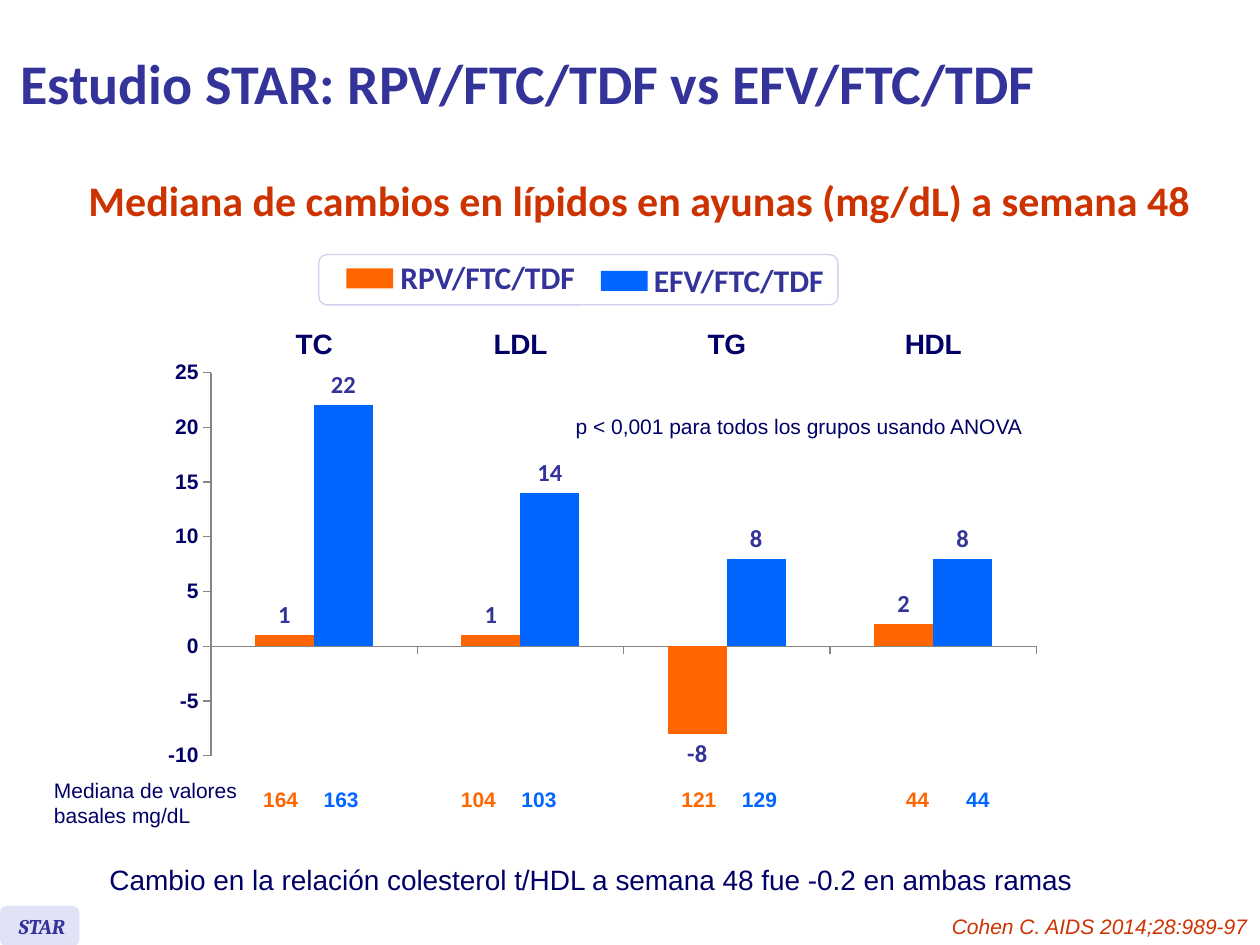
from dataclasses import dataclass

from pptx import Presentation
from pptx import util as u
from pptx.chart.data import CategoryChartData
from pptx.dml.color import RGBColor
from pptx.enum import chart as charts, shapes, text
from pptx.oxml import parse_xml
from pptx.oxml.ns import nsdecls

ORANGE, BLUE = "FF6600", "0066FF"
NAVY, INDIGO, RED = "000066", "333399", "CC3300"
GRAY = "868686"


@dataclass
class Area:
    left: float
    top: float
    width: float
    height: float

    def lengths(self):
        return [u.Inches(n) for n in (self.left, self.top, self.width, self.height)]


@dataclass
class Baseline:
    """Median starting values under one chart category."""
    left: float
    step: float
    width: float
    values: tuple[str, str]


@dataclass
class LegendKey:
    swatch: Area
    label: Area
    name: str
    color: str


def rgb(color: str) -> RGBColor:
    return RGBColor.from_string(color)


def format_font(font, color: str, **values) -> None:
    for name, value in values.items():
        setattr(font, name, u.Pt(value) if name == "size" else value)
    font.color.rgb = rgb(color)


def write(frame, words: str, color: str, align=text.PP_ALIGN.LEFT, **values):
    para = frame.paragraphs[0]
    para.text = words
    para.alignment = align
    for span in para.runs:
        format_font(span.font, color, **values)
    return para


def add_text(slide, area: Area, words: str, color: str, wrap=True, **values):
    box = slide.shapes.add_textbox(*area.lengths())
    box.text_frame.word_wrap = wrap
    return write(box.text_frame, words, color, **values)


def add_block(slide, kind, area: Area, fill: str, line: str | None = None) -> None:
    block = slide.shapes.add_shape(kind, *area.lengths())
    block.shadow.inherit = False
    block.fill.solid()
    block.fill.fore_color.rgb = rgb(fill)
    if line:
        block.line.color.rgb = rgb(line)
        block.line.width = u.Pt(0.75)
    else:
        block.line.fill.background()


def add_lipid_chart(slide) -> None:
    data = CategoryChartData()
    data.categories = ["TC", "LDL", "TG", "HDL"]
    data.add_series("RPV/FTC/TDF", [1, 1, -8, 2])
    data.add_series("EFV/FTC/TDF", [22, 14, 8, 8])
    chart = slide.shapes.add_chart(charts.XL_CHART_TYPE.COLUMN_CLUSTERED,
                                   *Area(1.17, 2.56, 7.2, 3.62).lengths(), data).chart
    chart.has_legend = chart.has_title = False
    format_font(chart.font, "002060", name="Arial", size=16, bold=True)

    plot = chart.plots[0]
    plot.gap_width, plot.overlap, plot.vary_by_categories = 150, 0, False
    for series, color in zip(plot.series, (ORANGE, BLUE)):
        series.invert_if_negative = False
        series.format.fill.solid()
        series.format.fill.fore_color.rgb = rgb(color)
        labels = series.data_labels
        labels.show_value = True
        labels.position = charts.XL_LABEL_POSITION.OUTSIDE_END
        format_font(labels.font, INDIGO, name="Calibri", size=14, bold=True)

    value_axis = chart.value_axis
    value_axis.minimum_scale, value_axis.maximum_scale, value_axis.major_unit = -10, 25, 5
    value_axis.has_major_gridlines = False
    chart.category_axis.tick_label_position = charts.XL_TICK_LABEL_POSITION.HIGH
    for axis, size in ((chart.category_axis, 16), (value_axis, 12)):
        axis.major_tick_mark = charts.XL_TICK_MARK.OUTSIDE
        axis.format.line.color.rgb = rgb(GRAY)
        format_font(axis.tick_labels.font, NAVY, name="Arial", size=size, bold=True)

    plot_area = chart.category_axis._element.getparent()
    for layout in plot_area.findall("{*}layout"):
        plot_area.remove(layout)
    places = "".join(f'<c:{tag} val="{value}"/>' for tag, value in (
        ("layoutTarget", "inner"), ("xMode", "edge"), ("yMode", "edge"),
        ("x", 0.07), ("y", 0.11), ("w", 0.91), ("h", 0.84)))
    plot_area.insert(0, parse_xml(
        f'<c:layout {nsdecls("c")}><c:manualLayout>{places}</c:manualLayout></c:layout>'))


def add_baselines(slide) -> None:
    add_text(slide, Area(0.33, 6.12, 1.71, 0.5), "Mediana de valores \nbasales mg/dL",
             NAVY, wrap=False, name="Arial", size=12)
    for group in (Baseline(1.99, 0.48, 0.48, ("164", "163")),
                  Baseline(3.56, 0.48, 0.48, ("104", "103")),
                  Baseline(5.31, 0.48, 0.48, ("121", "129")),
                  Baseline(7.09, 0.48, 0.39, ("44", "44"))):
        for index, (value, color) in enumerate(zip(group.values, (ORANGE, BLUE))):
            add_text(slide, Area(group.left + index * group.step, 6.19, group.width, 0.3),
                     value, color, wrap=False, name="Arial", size=12, bold=True)


def add_legend(slide) -> None:
    add_block(slide, shapes.MSO_SHAPE.ROUNDED_RECTANGLE, Area(2.53, 2.02, 4.12, 0.4),
              "FFFFFF", "D0D0F0")
    for key in (LegendKey(Area(2.75, 2.13, 0.37, 0.16), Area(3.08, 2, 1.73, 0.4),
                          "RPV/FTC/TDF", ORANGE),
                LegendKey(Area(4.77, 2.15, 0.37, 0.16), Area(5.09, 2.02, 1.75, 0.4),
                          "EFV/FTC/TDF", BLUE)):
        add_block(slide, shapes.MSO_SHAPE.RECTANGLE, key.swatch, key.color)
        add_text(slide, key.label, key.name, INDIGO, name="Calibri", size=18, bold=True)


def main() -> None:
    deck = Presentation()
    deck.slide_width, deck.slide_height = u.Inches(10), u.Inches(7.5)
    slide = deck.slides.add_slide(deck.slide_layouts[5])

    title = slide.shapes.title
    title.left, title.top, title.width, title.height = Area(0.06, 0.05, 9.55, 1.21).lengths()
    title.text_frame.vertical_anchor = text.MSO_ANCHOR.MIDDLE
    write(title.text_frame, "Estudio STAR: RPV/FTC/TDF vs EFV/FTC/TDF", INDIGO,
          name="Calibri", size=32, bold=True)
    subtitle = add_text(slide, Area(0.14, 1.42, 9.87, 0.51),
                        "Mediana de cambios en lípidos en ayunas (mg/dL) a semana 48", RED,
                        align=text.PP_ALIGN.CENTER, name="Calibri", size=24, bold=True)
    subtitle.line_spacing = u.Pt(22.8)

    add_lipid_chart(slide)
    add_text(slide, Area(4.47, 3.23, 4.46, 0.3),
             "p < 0,001 para todos los grupos usando ANOVA", NAVY, name="Arial", size=12)
    add_baselines(slide)
    add_legend(slide)

    add_text(slide, Area(0.77, 6.8, 8.29, 0.37),
             "Cambio en la relación colesterol t/HDL a semana 48 fue -0.2 en ambas ramas",
             NAVY, name="Arial", size=16)
    add_block(slide, shapes.MSO_SHAPE.ROUNDED_RECTANGLE, Area(0, 7.19, 0.63, 0.32), "E2E2F6")
    add_text(slide, Area(0.05, 7.2, 0.61, 0.3), "STAR", INDIGO,
             name="Cambria", size=12, bold=True, italic=True)
    add_text(slide, Area(7, 7.2, 3, 0.3), "Cohen C. AIDS 2014;28:989-97", RED,
             align=text.PP_ALIGN.RIGHT, name="Arial", size=12, italic=True)
    deck.save("out.pptx")


if __name__ == "__main__":
    main()
